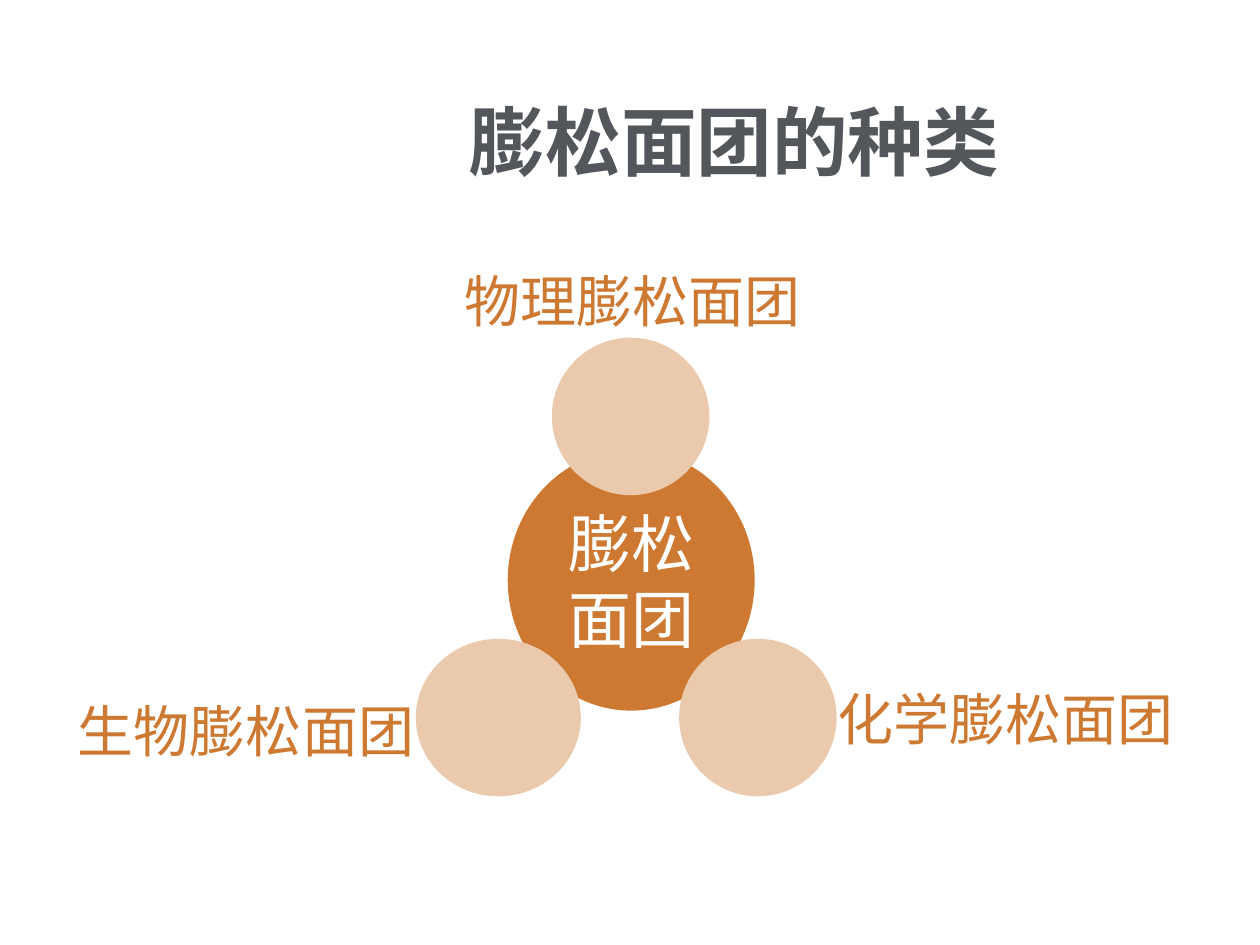
from pptx import Presentation
from pptx.dml.color import RGBColor
from pptx.enum.shapes import MSO_SHAPE
from pptx.enum.text import MSO_ANCHOR, PP_ALIGN
from pptx.util import Inches, Pt

COLORS = {"title": "53575C", "core": "CE7932", "outer": "EBC9AD", "white": "FFFFFF"}

# Each kind of dough: label, label box, circle box (left, top, width, height)
KINDS = [
    ("生物膨松面团", (0.52, 5.48, 2.99, 0.94), (3.3, 5.07, 1.31, 1.25)),
    ("物理膨松面团", (3.59, 2.07, 3.22, 0.94), (4.38, 2.68, 1.25, 1.25)),
    ("化学膨松面团", (6.55, 5.38, 3.1, 0.94), (5.39, 5.07, 1.25, 1.25)),
]


def write(shape, text, size, color, bold=False, align=PP_ALIGN.LEFT):
    frame = shape.text_frame
    frame.word_wrap = True
    frame.text = text
    para = frame.paragraphs[0]
    para.alignment = align
    font = para.runs[0].font
    font.name = "Arial"
    font.size = Pt(size)
    font.bold = bold
    font.color.rgb = RGBColor.from_string(COLORS[color])
    return frame


def add_text(page, box, text, size, color, **style):
    shape = page.shapes.add_textbox(*map(Inches, box))
    return write(shape, text, size, color, **style)


def add_circle(page, box, color):
    circle = page.shapes.add_shape(MSO_SHAPE.OVAL, *map(Inches, box))
    circle.shadow.inherit = False
    circle.fill.solid()
    circle.fill.fore_color.rgb = RGBColor.from_string(COLORS[color])
    circle.line.fill.background()
    return circle


def add_title(page, box):
    frame = add_text(page, box, "膨松面团的种类", 43.2, "title",
                     bold=True, align=PP_ALIGN.CENTER)
    frame.vertical_anchor = MSO_ANCHOR.MIDDLE
    frame.margin_bottom = Inches(0.63)  # lifts the line above the middle
    frame.paragraphs[0].line_spacing = 0.9


def add_core(page, box):
    circle = add_circle(page, box, "core")
    frame = write(circle, "膨松面团", 36, "white", align=PP_ALIGN.CENTER)
    frame.vertical_anchor = MSO_ANCHOR.MIDDLE


def add_kind(page, label, label_box, circle_box):
    add_circle(page, circle_box, "outer")
    add_text(page, label_box, label, 32, "core")


def main():
    deck = Presentation()
    deck.slide_width, deck.slide_height = Inches(10), Inches(7.5)
    page = deck.slides.add_slide(deck.slide_layouts[6])

    add_title(page, (2.1, 0.9, 7.46, 1.09))

    # Central circle with the three kinds around it
    add_core(page, (4.03, 3.57, 1.96, 2.07))
    for kind in KINDS:
        add_kind(page, *kind)

    deck.save("out.pptx")


if __name__ == "__main__":
    main()
